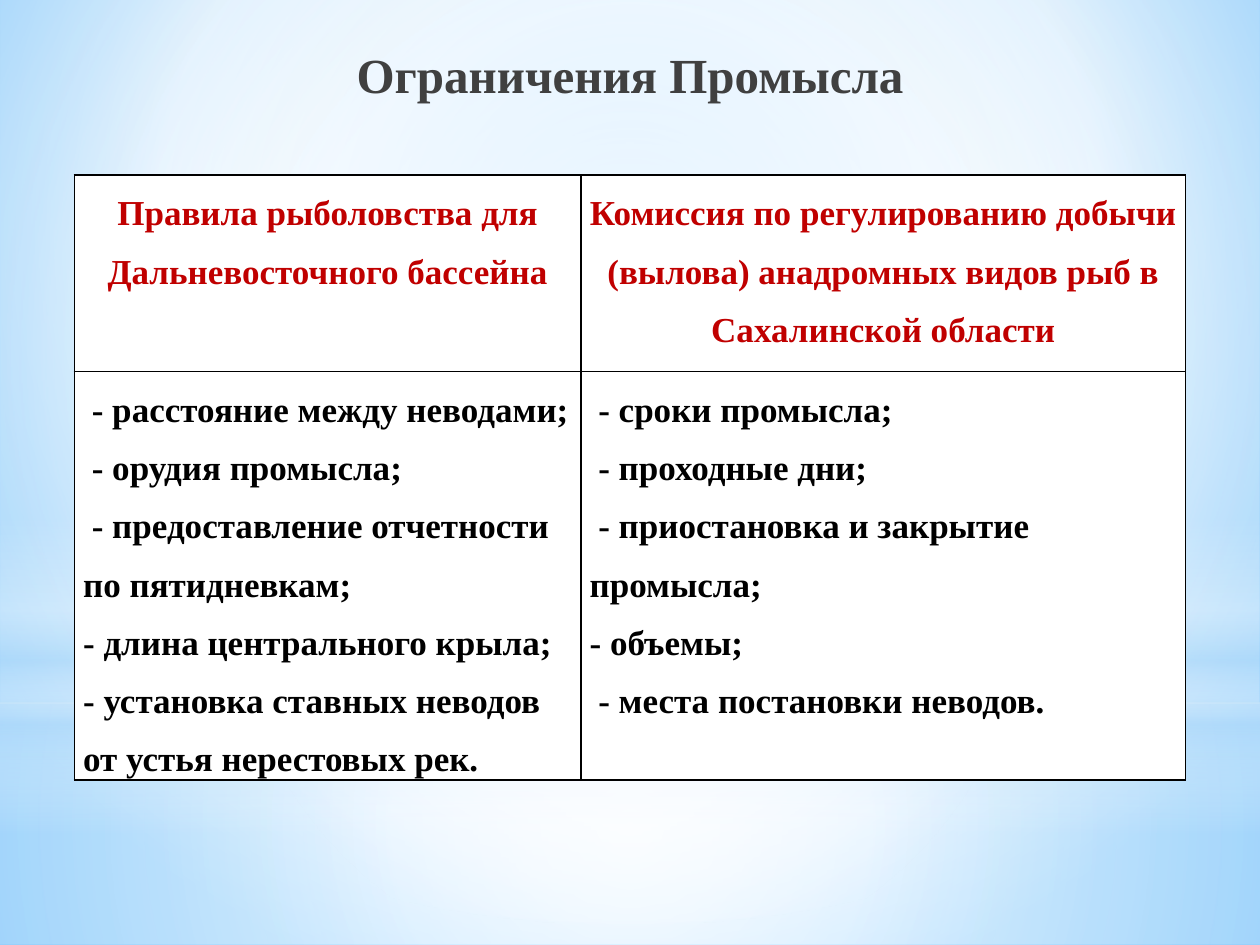
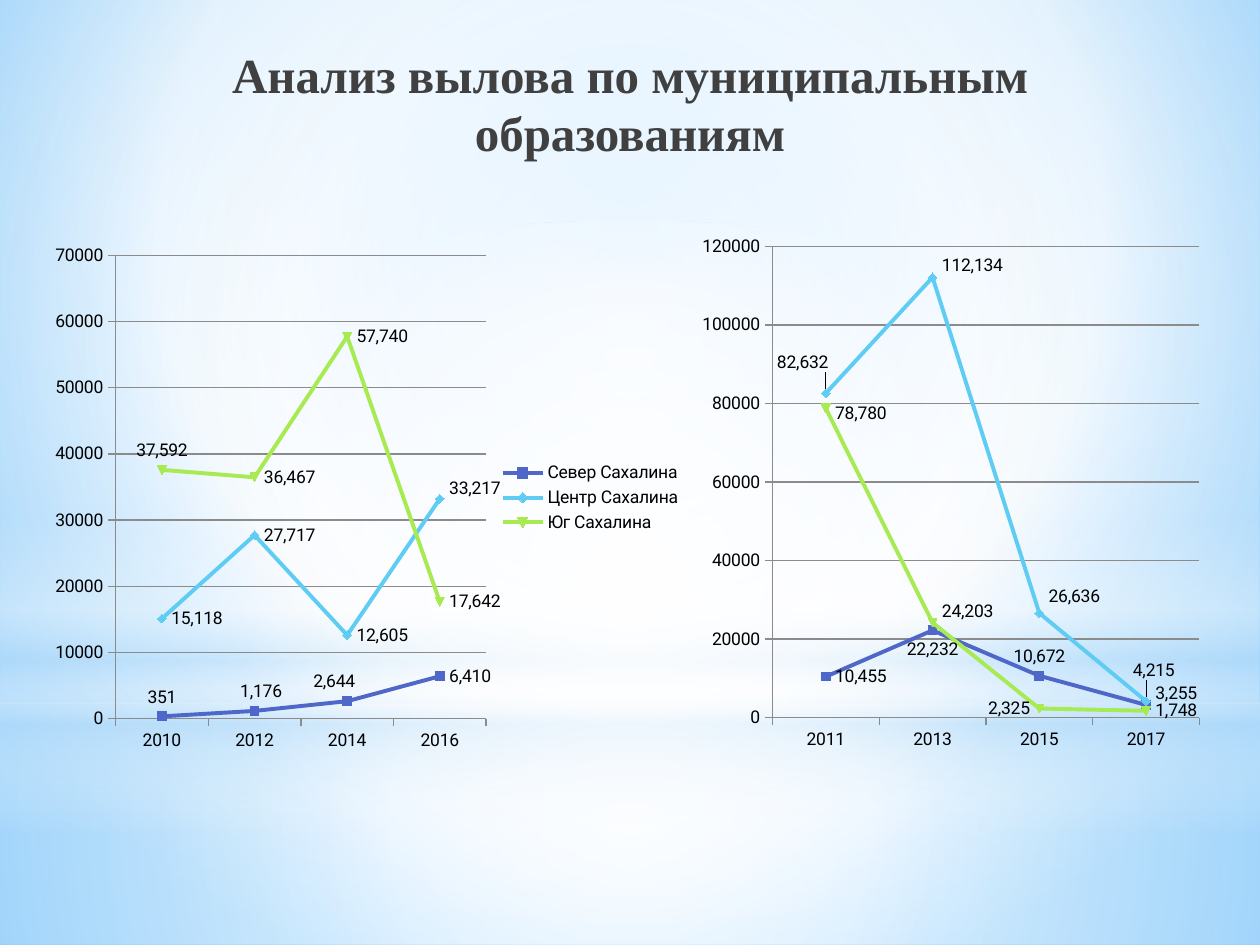
from lxml.etree import SubElement
from pptx import Presentation
from pptx.chart.data import CategoryChartData
from pptx.dml.color import RGBColor
from pptx.enum.chart import XL_CHART_TYPE, XL_LABEL_POSITION, XL_LEGEND_POSITION, XL_TICK_MARK
from pptx.enum.shapes import MSO_SHAPE
from pptx.enum.text import MSO_ANCHOR, MSO_AUTO_SIZE, PP_ALIGN
from pptx.oxml import parse_xml
from pptx.oxml.ns import nsdecls, qn
from pptx.util import Inches, Pt

COLORS = {
    "white": "FFFFFF", "black": "000000", "title": "404040", "heading": "C00000",
    "sky": "9ED5FF", "deep": "5BB9FF", "haze": "B4DCFA", "grid": "8B8B8B",
    "north": "4E67C8", "center": "5ECCF3", "south": "A7EA52",
}
SERIES_COLORS = ("north", "center", "south")
SERIF, SANS = "Times New Roman", "Roboto"
TITLE_BOX = (1.18, 0.6, 17.64, 1.54)
MIDDLE = (50, 50, 50, 50)

# Bands of the shared backdrop: shape, grid box, stops (position, colour, opacity), circle centre
BACKDROP = [
    (MSO_SHAPE.RECTANGLE, (0, 11.16, 20, 3.84),
     [(0, "white", 91), (37, "white", 76), (100, "haze", 79)], MIDDLE),
    (MSO_SHAPE.RECTANGLE, (0, 0, 20, 11.16),
     [(0, "white", 89), (48, "white", 62), (100, "haze", 79)], MIDDLE),
    (MSO_SHAPE.RECTANGLE, (0, 8.24, 20, 5),
     [(0, "white", 0), (29, "white", 30), (45, "haze", 40),
      (55, "white", 26), (65, "haze", 60), (100, "white", 0)], None),
    (MSO_SHAPE.OVAL, (0, 3.5, 20, 11.16),
     [(0, "white", 100), (56, "white", 0)], MIDDLE),
]
BACKGROUND_STOPS = [(0, "sky", 100), (60, "white", 100), (100, "deep", 100)]

LABEL_POSITIONS = {
    "a": XL_LABEL_POSITION.ABOVE, "b": XL_LABEL_POSITION.BELOW,
    "l": XL_LABEL_POSITION.LEFT, "r": XL_LABEL_POSITION.RIGHT,
}

RULES_TABLE = [
    [["Правила рыболовства для Дальневосточного бассейна"],
     ["Комиссия по регулированию добычи (вылова) анадромных видов рыб в Сахалинской области"]],
    [[" - расстояние между неводами;", " - орудия промысла;",
      " - предоставление отчетности по пятидневкам;",
      "- длина центрального крыла;",
      "- установка ставных неводов от устья нерестовых рек."],
     [" - сроки промысла;", " - проходные дни;",
      " - приостановка и закрытие промысла;",
      "- объемы;", " - места постановки неводов."]],
]

# Label codes give one side per point; nudges are shares of the chart by (series, point)
EVEN_YEARS = {
    "box": (0.7, 3.72, 10.32, 8.36), "years": ("2010", "2012", "2014", "2016"),
    "plot": (0.11, 0.04, 0.57, 0.88), "top": 70000, "step": 10000, "legend": True,
    "series": [
        ("Север Сахалина", (351, 1176, 2644, 6410), "aaar"),
        ("Центр Сахалина", (15118, 27717, 12605, 33217), "rrrr"),
        ("Юг Сахалина", (37592, 36467, 57740, 17642), "arrr"),
    ],
    "nudges": {(0, 1): (0.01, 0), (0, 2): (-0.02, 0), (1, 3): (0, -0.02)},
}
ODD_YEARS = {
    "box": (10.48, 3.24, 12.28, 8.98), "years": ("2011", "2013", "2015", "2017"),
    "plot": (0.145, 0.075, 0.552, 0.833), "top": 120000, "step": 20000, "legend": False,
    "series": [
        ("Series 1", (10455, 22232, 10672, 3255), "rbar"),
        ("Series 2", (82632, 112134, 26636, 4215), "arra"),
        ("Series 3", (78780, 24203, 2325, 1748), "rrlr"),
    ],
    "nudges": {(0, 3): (0, -0.02), (1, 0): (-0.03, -0.02), (1, 1): (0, -0.02),
               (1, 2): (0, -0.03), (1, 3): (0.01, -0.02), (2, 0): (0, 0.01),
               (2, 1): (0, -0.02)},
}


def color(name):
    return RGBColor.from_string(COLORS[name])


def apply(target, **values):
    for name, value in values.items():
        setattr(target, name, value)


def style_font(font, name, size, color_name, bold=False):
    apply(font, name=name, size=Pt(size), bold=bold)
    font.color.rgb = color(color_name)


def style_line(line, color_name, width):
    line.color.rgb = color(color_name)
    line.width = Pt(width)


def set_gradient(element, stops, center):
    """Replace the empty fill of an element with a circular or vertical gradient."""
    marks = "".join(
        f'<a:gs pos="{position * 1000}"><a:srgbClr val="{COLORS[name]}">'
        f'<a:alpha val="{opacity * 1000}"/></a:srgbClr></a:gs>'
        for position, name, opacity in stops)
    direction = '<a:lin ang="5400000" scaled="0"/>'
    if center:
        sides = " ".join(f'{side}="{share * 1000}"' for side, share in zip("ltrb", center))
        direction = f'<a:path path="circle"><a:fillToRect {sides}/></a:path>'
    empty = element.xpath(".//a:noFill")[0]
    empty.getparent().replace(empty, parse_xml(
        f'<a:gradFill {nsdecls("a")} rotWithShape="1"><a:gsLst>{marks}</a:gsLst>'
        f'{direction}</a:gradFill>'))


def add_layout(parent, index, target, **shares):
    """Place a chart part by shares of the chart."""
    for old in parent.findall(qn("c:layout")):
        parent.remove(old)
    layout = SubElement(parent, qn("c:layout"))
    parent.insert(index, layout)
    manual = SubElement(layout, qn("c:manualLayout"))
    if target:
        settings = {"layoutTarget": target, "xMode": "edge", "yMode": "edge"}
    else:
        settings = {}
    for name, value in {**settings, **shares}.items():
        SubElement(manual, qn(f"c:{name}")).set("val", str(value))


class Deck:
    """Holds the shared style and the current slide on a grid of 20 columns by 15 rows."""

    def __init__(self):
        self.presentation = Presentation()
        apply(self.presentation, slide_width=Inches(10), slide_height=Inches(7.5))
        self.column = self.presentation.slide_width / 20
        self.row = self.presentation.slide_height / 15
        self.layout = self.presentation.slide_layouts[5]
        self.slide = None

    def box(self, left, top, width, height):
        return (int(left * self.column), int(top * self.row),
                int(width * self.column), int(height * self.row))

    def add_slide(self, title):
        first = self.slide is None
        self.slide = self.presentation.slides.add_slide(self.layout)
        if first:
            self.build_backdrop()
        shape = self.slide.shapes.title
        left, top, width, height = self.box(*TITLE_BOX)
        apply(shape, left=left, top=top, width=width, height=height)
        frame = shape.text_frame
        frame.text = title
        apply(frame, word_wrap=True, auto_size=MSO_AUTO_SIZE.NONE,
              vertical_anchor=MSO_ANCHOR.TOP)
        paragraph = frame.paragraphs[0]
        paragraph.alignment = PP_ALIGN.CENTER
        style_font(paragraph.runs[0].font, SERIF, 28, "title", True)

    def build_backdrop(self):
        """Put the gradient background and its bands on the shared layout."""
        self.layout.background.fill.background()
        set_gradient(self.layout.element.xpath(".//p:bgPr")[0],
                     BACKGROUND_STOPS, (20, 10, 20, 60))
        tree = self.layout.shapes.element
        for index, (kind, box, stops, center) in enumerate(BACKDROP):
            shape = self.slide.shapes.add_shape(kind, *self.box(*box))
            shape.shadow.inherit = False
            shape.fill.background()
            set_gradient(shape.element.spPr, stops, center)
            shape.line.fill.background()
            shape.element.xpath(".//p:cNvPr")[0].set("id", str(100 + index))
            tree.insert(2 + index, shape.element)

    def add_table(self, rows, left, top, widths, heights):
        box = self.box(left, top, sum(widths), sum(heights))
        table = self.slide.shapes.add_table(len(rows), len(widths), *box).table
        apply(table, first_row=False, horz_banding=False)
        for column, width in zip(table.columns, widths):
            column.width = int(width * self.column)
        for index, (row, height) in enumerate(zip(table.rows, heights)):
            row.height = int(height * self.row)
            for cell, lines in zip(row.cells, rows[index]):
                self.fill_cell(cell, lines, heading=index == 0)

    def fill_cell(self, cell, lines, heading):
        apply(cell, margin_left=Inches(0.07), margin_right=Inches(0.07),
              margin_top=0, margin_bottom=0)
        cell.fill.solid()
        cell.fill.fore_color.rgb = color("white")
        properties = cell._tc.get_or_add_tcPr()
        for index, side in enumerate("LRTB"):
            properties.insert(index, parse_xml(
                f'<a:ln{side} {nsdecls("a")} w="12700"><a:solidFill>'
                f'<a:srgbClr val="{COLORS["black"]}"/></a:solidFill></a:ln{side}>'))
        cell.text_frame.text = "\n".join(lines)
        for paragraph in cell.text_frame.paragraphs:
            apply(paragraph, line_spacing=1.5,
                  alignment=PP_ALIGN.CENTER if heading else PP_ALIGN.LEFT)
            style_font(paragraph.runs[0].font, SERIF, 20,
                       "heading" if heading else "black", True)

    def add_line_chart(self, box, years, plot, top, step, legend, series, nudges):
        data = CategoryChartData(number_format="#,##0")
        data.categories = years
        for name, values, _ in series:
            data.add_series(name, values)
        chart = self.slide.shapes.add_chart(
            XL_CHART_TYPE.LINE_MARKERS, *self.box(*box), data).chart
        apply(chart, has_title=False, has_legend=legend)
        style_font(chart.font, SANS, 10, "black")
        if legend:
            apply(chart.legend, position=XL_LEGEND_POSITION.RIGHT, include_in_layout=False)
        x, y, width, height = plot
        add_layout(chart._chartSpace.chart.plotArea, 0, "inner", x=x, y=y, w=width, h=height)

        # Axes
        apply(chart.value_axis, minimum_scale=0, maximum_scale=top, major_unit=step,
              has_major_gridlines=True)
        apply(chart.value_axis.tick_labels, number_format="0", number_format_is_linked=False)
        style_line(chart.value_axis.major_gridlines.format.line, "grid", 0.75)
        for axis in (chart.category_axis, chart.value_axis):
            axis.major_tick_mark = XL_TICK_MARK.OUTSIDE
            style_line(axis.format.line, "grid", 0.75)

        # Lines, markers and labels
        chart.plots[0].vary_by_categories = False
        for index, (line, color_name) in enumerate(zip(chart.plots[0].series, SERIES_COLORS)):
            line.smooth = False
            style_line(line.format.line, color_name, 2.25)
            line.marker.format.fill.solid()
            line.marker.format.fill.fore_color.rgb = color(color_name)
            style_line(line.marker.format.line, color_name, 0.75)
            apply(line.data_labels, show_value=True, number_format="#,##0",
                  number_format_is_linked=False)
            for point, code in enumerate(series[index][2]):
                line.points[point].data_label.position = LABEL_POSITIONS[code]
                if (index, point) in nudges:
                    x, y = nudges[index, point]
                    label = line._element.xpath(f".//c:dLbl[c:idx/@val='{point}']")[0]
                    add_layout(label, 1, None, x=x, y=y)


def main():
    deck = Deck()

    # Fishing limits
    deck.add_slide("Ограничения Промысла")
    deck.add_table(RULES_TABLE, 1.18, 2.78, widths=(8.04, 9.6), heights=(3.12, 6.48))

    # Catch by district
    deck.add_slide("Анализ вылова по муниципальным образованиям")
    for chart in (EVEN_YEARS, ODD_YEARS):
        deck.add_line_chart(**chart)

    deck.presentation.save("out.pptx")


if __name__ == "__main__":
    main()
